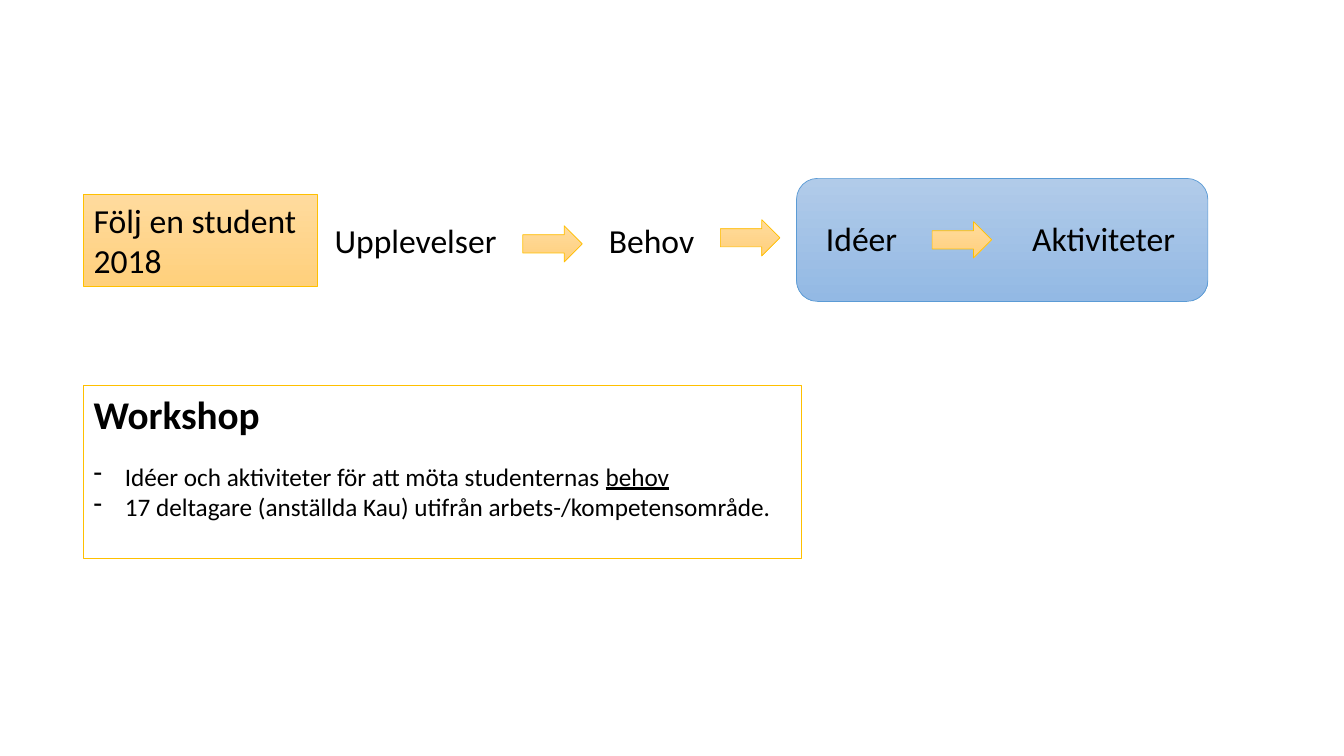
import pptx
import pptx.util
import pptx.dml.color
import pptx.enum.shapes
import pptx.enum.text
import pptx.oxml.ns
import lxml.etree

Inches = pptx.util.Inches
Pt = pptx.util.Pt
SHAPE = pptx.enum.shapes.MSO_SHAPE
ALIGN = pptx.enum.text.PP_ALIGN

# Content: places are left, top, width, height in inches
COLOURS = {
    "text": "000000",
    "gold line": "FFC000",
    "gold top": "FFDB9E",
    "gold bottom": "FFD07C",
    "blue line": "5B9BD5",
    "blue top": "B1CBE9",
    "blue bottom": "93B9E4",
}
FONT = "Calibri"

RESULT_PANEL = (7.9, 1.77, 4.08, 1.22)
WORKSHOP_BOX = (0.83, 3.82, 7.12, 1.72)
START_BOX = (0.83, 1.93, 2.32, 0.91)
START_TEXT = "Följ en student 2018"
STEPS = [
    ("Upplevelser", (3.22, 2.13, 1.86, 0.5), ALIGN.LEFT),
    ("Behov", (5.94, 2.13, 1.2, 0.5), ALIGN.LEFT),
    ("Idéer", (7.95, 2.11, 1.19, 0.5), ALIGN.CENTER),
    ("Aktiviteter", (9.97, 2.11, 1.95, 0.5), ALIGN.CENTER),
]
ARROW_SIZE = (0.59, 0.36)
ARROW_CENTRES = [(5.48, 2.42), (7.44, 2.36), (9.54, 2.38)]
WORKSHOP_TITLE = "Workshop"
# Each point is plain text followed by underlined text
WORKSHOP_POINTS = [
    ("Idéer och aktiviteter för att möta studenternas ", "behov"),
    ("17 deltagare (anställda Kau) utifrån arbets-/kompetensområde.", ""),
]


def rgb(name):
    return pptx.dml.color.RGBColor.from_string(COLOURS[name])


def add_box(page, kind, place, hue, filled=True, line_width=0.5):
    box = page.shapes.add_shape(kind, *map(Inches, place))
    box.shadow.inherit = False
    box.line.color.rgb = rgb(hue + " line")
    box.line.width = Pt(line_width)
    if filled:
        box.fill.gradient()
        box.fill.gradient_angle = 270
        for stop, end in zip(box.fill.gradient_stops, ("top", "bottom")):
            stop.position = 0 if end == "top" else 1
            stop.color.rgb = rgb(f"{hue} {end}")
    else:
        box.fill.background()
    return box


def set_font(para, size, bold=False):
    para.font.name = FONT
    para.font.size = Pt(size)
    para.font.bold = bold
    para.font.color.rgb = rgb("text")


def write(box, text, size, align=ALIGN.LEFT, bold=False):
    frame = box.text_frame
    frame.word_wrap = True
    frame.vertical_anchor = pptx.enum.text.MSO_ANCHOR.TOP
    para = frame.paragraphs[0]
    para.add_run().text = text
    para.alignment = align
    set_font(para, size, bold)


def add_point(frame, plain, underlined, space_before):
    para = frame.add_paragraph()
    para.alignment = ALIGN.LEFT
    para.space_before = Pt(space_before)
    properties = para._p.get_or_add_pPr()
    properties.set("marL", str(Inches(0.31)))
    properties.set("indent", str(Inches(-0.31)))
    bullet = lxml.etree.SubElement(properties, pptx.oxml.ns.qn("a:buChar"))
    bullet.set("char", "-")
    set_font(para, 18)
    para.add_run().text = plain
    if underlined:
        span = para.add_run()
        span.text = underlined
        span.font.underline = True


def main():
    deck = pptx.Presentation()
    deck.slide_width, deck.slide_height = Inches(13.33), Inches(7.5)
    page = deck.slides.add_slide(deck.slide_layouts[6])

    # Panel behind the last two steps
    panel = add_box(page, SHAPE.ROUNDED_RECTANGLE, RESULT_PANEL, "blue")
    panel.adjustments[0] = 0.17

    # Workshop box
    workshop = add_box(page, SHAPE.RECTANGLE, WORKSHOP_BOX, "gold", False, 0.75)
    write(workshop, WORKSHOP_TITLE, 28, bold=True)
    for index, (plain, underlined) in enumerate(WORKSHOP_POINTS):
        add_point(workshop.text_frame, plain, underlined, 0 if index else 17)

    # Process: start, steps and arrows
    start = add_box(page, SHAPE.RECTANGLE, START_BOX, "gold")
    write(start, START_TEXT, 24)
    for text, place, align in STEPS:
        label = page.shapes.add_textbox(*map(Inches, place))
        write(label, text, 24, align)
    width, height = ARROW_SIZE
    for x, y in ARROW_CENTRES:
        place = (x - width / 2, y - height / 2, width, height)
        add_box(page, SHAPE.RIGHT_ARROW, place, "gold")

    deck.save("out.pptx")


if __name__ == "__main__":
    main()
